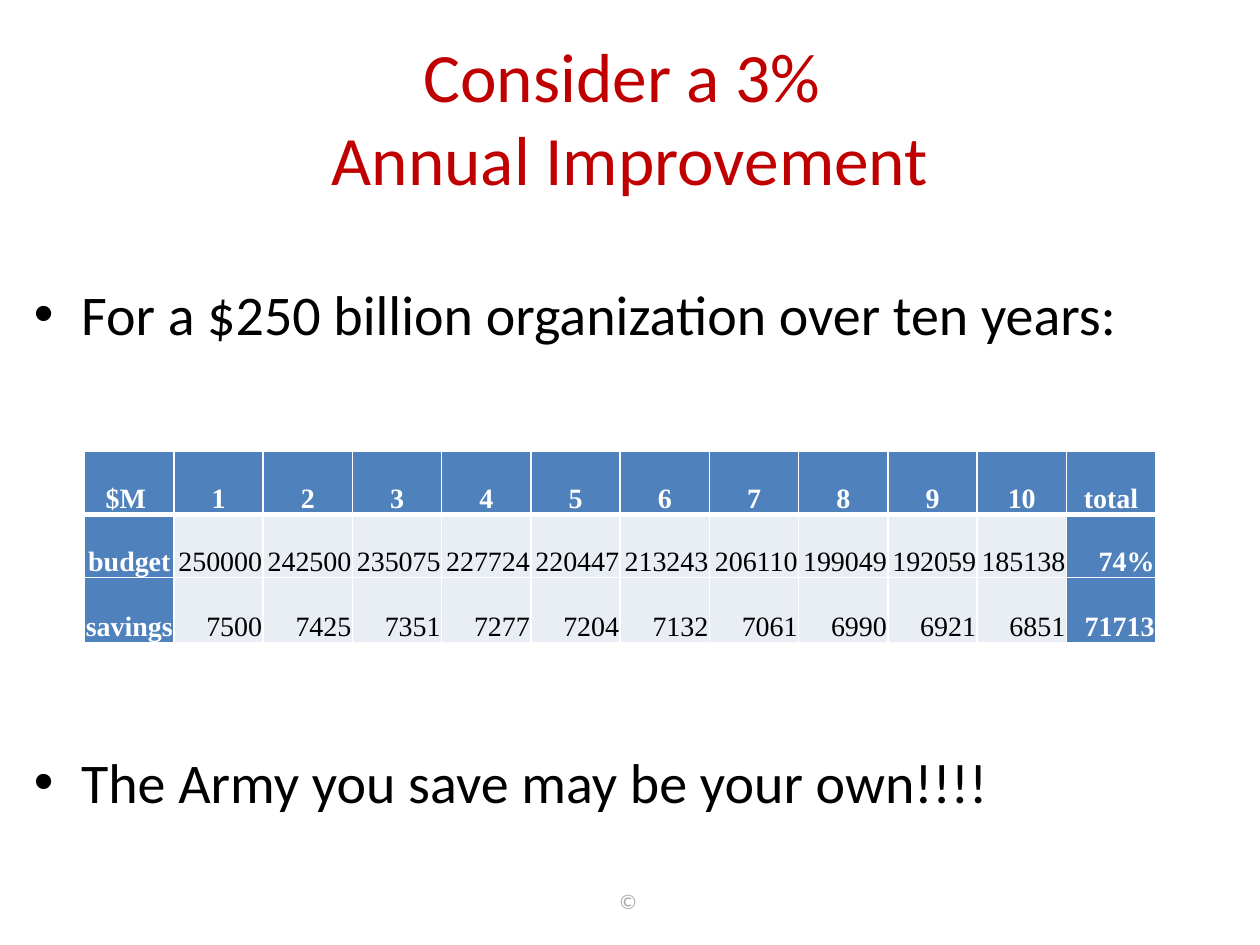
from lxml import etree
from pptx import Presentation
from pptx import util as u
from pptx.dml.color import RGBColor
from pptx.enum import text
from pptx.oxml.ns import qn

TITLE = "Consider a 3% \vAnnual Improvement"
BULLETS = [
    ("For a $250 billion organization over ten years:", 0),
    ("The Army you save may be your own!!!!", 229),
]
FOOTER = "© "
ROWS = [
    ["$M ", *map(str, range(1, 11)), "total"],
    ["budget", "250000", "242500", "235075", "227724", "220447", "213243",
     "206110", "199049", "192059", "185138", "74%"],
    ["savings", "7500", "7425", "7351", "7277", "7204", "7132",
     "7061", "6990", "6921", "6851", "71713"],
]
ROW_HEIGHTS = [36, 36, 37.4]
COL_WIDTH = 51
INDENT = 27
THEME = {
    "title": "C00000", "body": "000000", "footer": "A6A6A6", "white": "FFFFFF",
    "head": "4F81BD", "band": "E9EDF4",
    "sans": "Calibri", "serif": "Times New Roman",
    "title_size": 39.6, "body_size": 32, "footer_size": 12, "cell_size": 16,
}
CENTER, LEFT, RIGHT = text.PP_ALIGN.CENTER, text.PP_ALIGN.LEFT, text.PP_ALIGN.RIGHT


def write(p, words, size, color, font=THEME["sans"], bold=False, align=LEFT, before=0):
    p.text = words
    p.alignment = align
    p.space_before = u.Pt(before)
    for r in p.runs:
        r.font.size, r.font.name, r.font.bold = u.Pt(size), font, bold
        r.font.color.rgb = RGBColor.from_string(color)


def add_box(slide, left, top, width, height, anchor):
    tf = slide.shapes.add_textbox(*map(u.Pt, (left, top, width, height))).text_frame
    tf.word_wrap = True
    tf.vertical_anchor = anchor
    return tf


def add_bullet(p):
    pPr = p._p.get_or_add_pPr()
    pPr.set("marL", str(u.Pt(INDENT)))
    pPr.set("indent", str(-u.Pt(INDENT)))
    etree.SubElement(pPr, qn("a:buFont"), typeface="Arial")
    etree.SubElement(pPr, qn("a:buChar"), char="•")


def add_borders(cell, top, bottom):
    tcPr = cell._tc.get_or_add_tcPr()
    for side, width in (("L", 1), ("R", 1), ("T", top), ("B", bottom)):
        ln = etree.SubElement(tcPr, qn(f"a:ln{side}"), w=str(u.Pt(width)))
        fill = etree.SubElement(ln, qn("a:solidFill"))
        etree.SubElement(fill, qn("a:srgbClr"), val=THEME["white"])


def add_budget_table(slide):
    cols = len(ROWS[0])
    table = slide.shapes.add_table(
        len(ROWS), cols, u.Pt(48.4), u.Pt(258), u.Pt(COL_WIDTH * cols), u.Pt(sum(ROW_HEIGHTS))
    ).table
    for col in table.columns:
        col.width = u.Pt(COL_WIDTH)
    for i, (row, height) in enumerate(zip(ROWS, ROW_HEIGHTS)):
        table.rows[i].height = u.Pt(height)
        for j, words in enumerate(row):
            cell = table.cell(i, j)
            head = i == 0 or j in (0, cols - 1)
            cell.margin_left = cell.margin_right = cell.margin_top = u.Pt(0.6)
            cell.margin_bottom = 0
            cell.vertical_anchor = text.MSO_ANCHOR.BOTTOM
            add_borders(cell, top=3 if i == 1 else 1, bottom=3 if i == 0 else 1)
            cell.fill.solid()
            cell.fill.fore_color.rgb = RGBColor.from_string(THEME["head" if head else "band"])
            write(cell.text_frame.paragraphs[0], words, THEME["cell_size"],
                  THEME["white" if head else "body"], font=THEME["serif"], bold=head,
                  align=CENTER if i == 0 or j == 0 else RIGHT)


def main():
    """Build the annual improvement slide."""
    prs = Presentation()
    prs.slide_width, prs.slide_height = u.Pt(720), u.Pt(540)
    slide = prs.slides.add_slide(prs.slide_layouts[6])

    tf = add_box(slide, 36, 21.6, 648, 90, text.MSO_ANCHOR.MIDDLE)
    write(tf.paragraphs[0], TITLE, THEME["title_size"], THEME["title"], align=CENTER)

    tf = add_box(slide, 12.24, 156.24, 707.76, 324, text.MSO_ANCHOR.TOP)
    for i, (words, before) in enumerate(BULLETS):
        p = tf.add_paragraph() if i else tf.paragraphs[0]
        write(p, words, THEME["body_size"], THEME["body"], before=before)
        add_bullet(p)

    tf = add_box(slide, 246.24, 500.4, 228.24, 28.8, text.MSO_ANCHOR.MIDDLE)
    write(tf.paragraphs[0], FOOTER, THEME["footer_size"], THEME["footer"], align=CENTER)

    add_budget_table(slide)
    prs.save("out.pptx")


if __name__ == "__main__":
    main()
